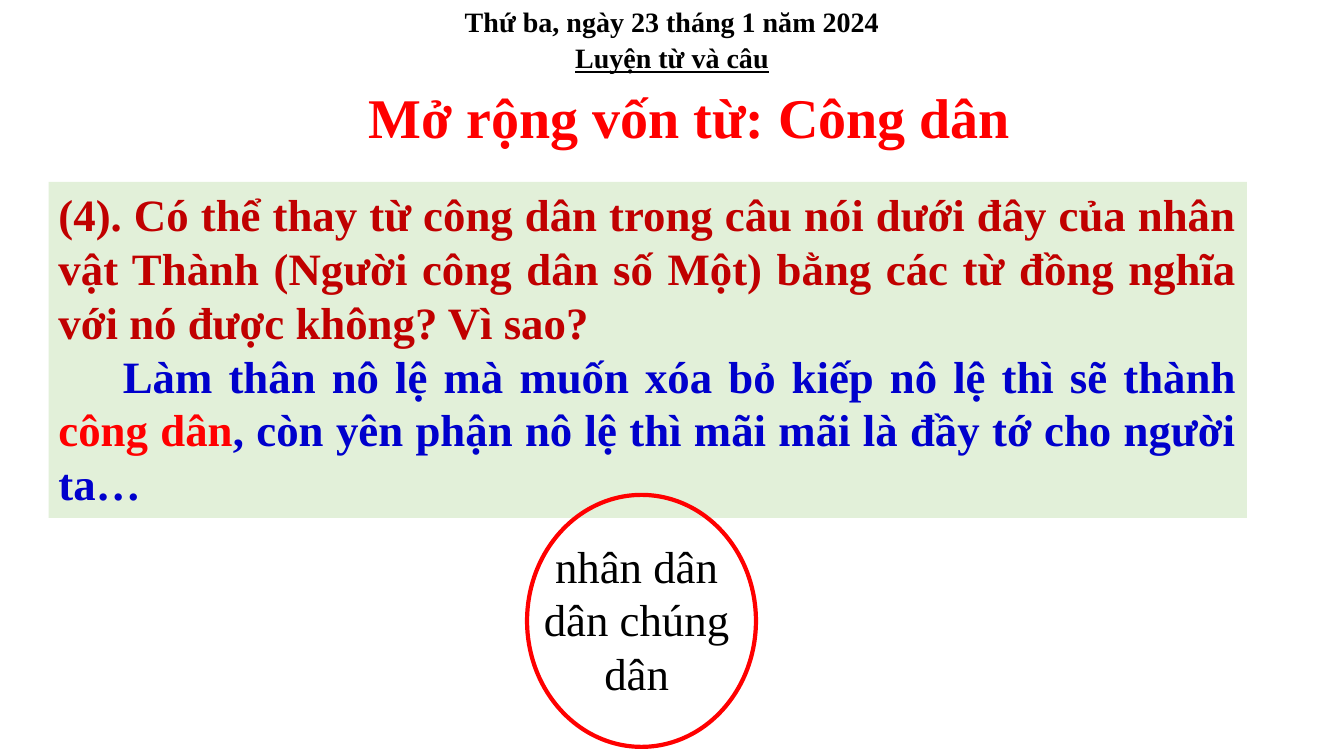
from pptx import Presentation
from pptx.dml.color import RGBColor
from pptx.enum.shapes import MSO_SHAPE
from pptx.enum.text import MSO_ANCHOR, PP_ALIGN
from pptx.util import Pt

RECT, OVAL = MSO_SHAPE.RECTANGLE, MSO_SHAPE.OVAL
TOP = MSO_ANCHOR.TOP
CENTER, JUSTIFY = PP_ALIGN.CENTER, PP_ALIGN.JUSTIFY

BLACK = RGBColor(0x00, 0x00, 0x00)
RED = RGBColor(0xFF, 0x00, 0x00)
MAROON = RGBColor(0xC0, 0x00, 0x00)
BLUE = RGBColor(0x00, 0x00, 0xCC)
GREEN = RGBColor(0xE2, 0xF0, 0xD9)


def add_text(para, text, size=32, color=BLACK, bold=True, line=False,
             face="Times New Roman"):
    run = para.add_run()
    run.text = text
    font = run.font
    font.name, font.size = face, Pt(size)
    font.bold, font.underline = bold, line
    font.color.rgb = color


class Board:
    def __init__(self, slide):
        self.slide = slide

    def fill_text(self, frame, paras, align, indent=0, **style):
        """Fill a frame; each paragraph is a list of (text, color) runs."""
        frame.word_wrap = True
        frame.vertical_anchor = TOP
        for i, runs in enumerate(paras):
            para = frame.add_paragraph() if i else frame.paragraphs[0]
            para.alignment = align
            if i and indent:
                props = para._p.get_or_add_pPr()
                props.set("marL", "0")
                props.set("indent", str(Pt(indent)))
            for text, color in runs:
                add_text(para, text, color=color, **style)

    def label(self, box, lines, color=BLACK, **style):
        shape = self.slide.shapes.add_textbox(*map(Pt, box))
        paras = [[(text, color)] for text in lines]
        self.fill_text(shape.text_frame, paras, CENTER, **style)

    def shape(self, kind, box, fill=None, line=None):
        shape = self.slide.shapes.add_shape(kind, *map(Pt, box))
        shape.shadow.inherit = False
        if fill is None:
            shape.fill.background()
        else:
            shape.fill.solid()
            shape.fill.fore_color.rgb = fill
        if line is None:
            shape.line.fill.background()
        else:
            shape.line.color.rgb = line
            shape.line.width = Pt(3)
        return shape


def main():
    deck = Presentation()
    deck.slide_width, deck.slide_height = Pt(960), Pt(540)
    board = Board(deck.slides.add_slide(deck.slide_layouts[6]))

    board.label((120, 0, 720, 31.5), ["Thứ ba, ngày 23 tháng 1 năm 2024"], size=20)
    board.label((120, 25.5, 720, 31.5), ["Luyện từ và câu"], size=20, line=True)
    board.label((195, 55.7, 595, 55.7), ["Mở rộng vốn từ: Công dân"], RED, size=40)

    task = board.shape(RECT, (34.7, 130, 856, 240), fill=GREEN)
    ask = ("(4). Có thể thay từ công dân trong câu nói dưới đây của nhân vật "
           "Thành (Người công dân số Một) bằng các từ đồng nghĩa với nó được "
           "không? Vì sao?")
    quote = [
        ("Làm thân nô lệ mà muốn xóa bỏ kiếp nô lệ thì sẽ thành ", BLUE),
        ("công dân", RED),
        (", còn yên phận nô lệ thì mãi mãi là đầy tớ cho người ta…", BLUE),
    ]
    board.fill_text(task.text_frame, [[(ask, MAROON)], quote], JUSTIFY, indent=46)

    board.label((369.5, 381, 170.5, 124), ["nhân dân", "dân chúng", "dân"], bold=False)
    board.shape(OVAL, (376.5, 353.5, 163.5, 180), line=RED)

    deck.save("out.pptx")


if __name__ == "__main__":
    main()
